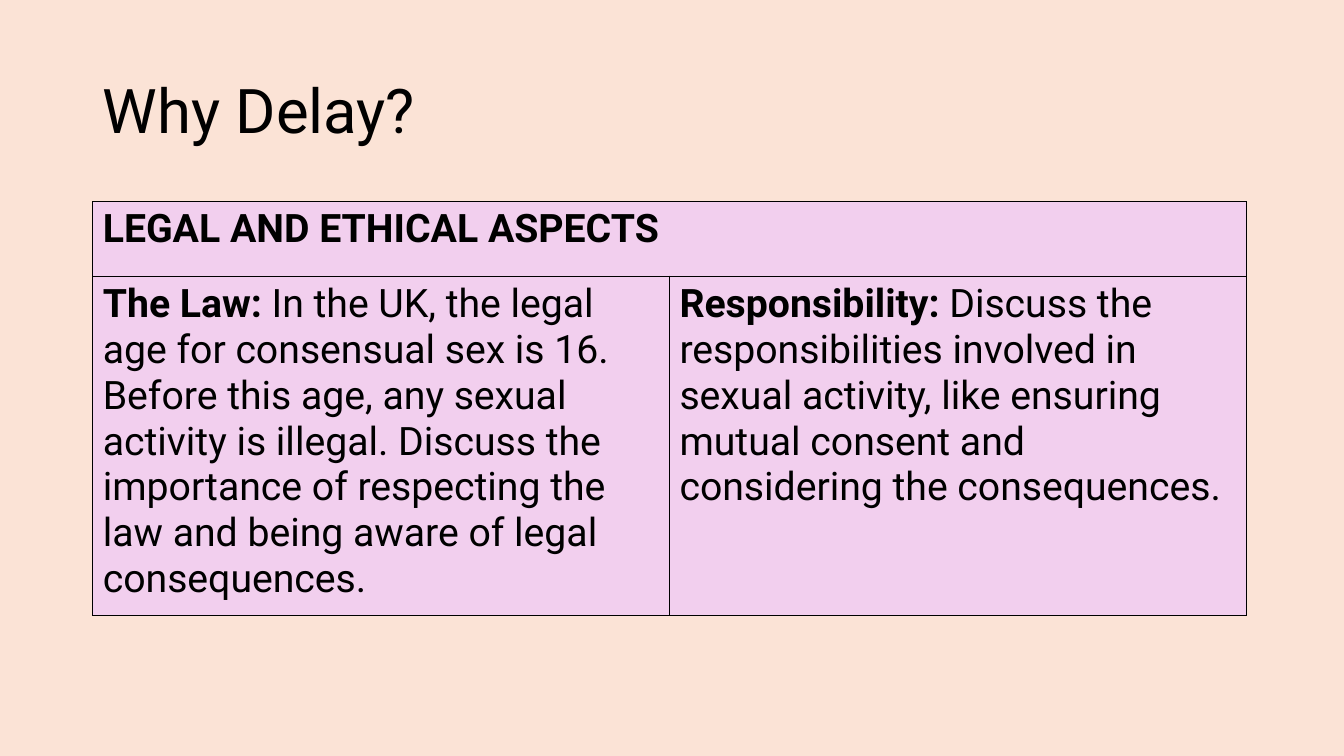
from lxml import etree
from pptx import Presentation
from pptx.dml.color import RGBColor
from pptx.enum import text
from pptx.oxml import ns
from pptx.util import Inches, Pt

PEACH = RGBColor(0xFB, 0xE3, 0xD6)
PINK = RGBColor(0xF2, 0xCF, 0xEE)
BLACK = RGBColor(0, 0, 0)
FONT = "Roboto"


def add_span(para, words, size, bold=False):
    span = para.add_run()
    span.text = words
    span.font.name = FONT
    span.font.size = Pt(size)
    span.font.bold = bold
    span.font.color.rgb = BLACK


def add_borders(cell):
    properties = cell._tc.get_or_add_tcPr()
    for index, side in enumerate(("a:lnL", "a:lnR", "a:lnT", "a:lnB")):
        line = etree.Element(ns.qn(side), w=str(Pt(1)))
        fill = etree.SubElement(line, ns.qn("a:solidFill"))
        etree.SubElement(fill, ns.qn("a:srgbClr"), val=str(BLACK))
        properties.insert(index, line)


deck = Presentation()
deck.slide_width = Inches(13.33)
deck.slide_height = Inches(7.5)
page = deck.slides.add_slide(deck.slide_layouts[6])
page.background.fill.solid()
page.background.fill.fore_color.rgb = PEACH

# Title
title = page.shapes.add_textbox(Inches(0.92), Inches(0.4), Inches(11.5), Inches(1.45))
title.text_frame.word_wrap = True
title.text_frame.vertical_anchor = text.MSO_ANCHOR.MIDDLE
para = title.text_frame.paragraphs[0]
para.line_spacing = 0.9
add_span(para, "Why Delay?", 44)

# Table: a heading across two columns of reasons
table = page.shapes.add_table(
    2, 2, Inches(0.92), Inches(2), Inches(11.44), Inches(3.81)).table
for column in table.columns:
    column.width = Inches(5.72)
for row, height in zip(table.rows, (0.74, 3.07)):
    row.height = Inches(height)
table.cell(0, 0).merge(table.cell(0, 1))
for cell in table.iter_cells():
    cell.fill.solid()
    cell.fill.fore_color.rgb = PINK
    add_borders(cell)

# Table wording
add_span(table.cell(0, 0).text_frame.paragraphs[0], "LEGAL AND ETHICAL ASPECTS", 28, True)
reasons = [
    ("The Law:",
     " In the UK, the legal age for consensual sex is 16. Before this age, any sexual "
     "activity is illegal. Discuss the importance of respecting the law and being aware "
     "of legal consequences."),
    ("Responsibility:",
     " Discuss the responsibilities involved in sexual activity, like ensuring mutual "
     "consent and considering the consequences."),
]
for index, (label, detail) in enumerate(reasons):
    para = table.cell(1, index).text_frame.paragraphs[0]
    add_span(para, label, 28, True)
    add_span(para, detail, 28)

deck.save("out.pptx")
